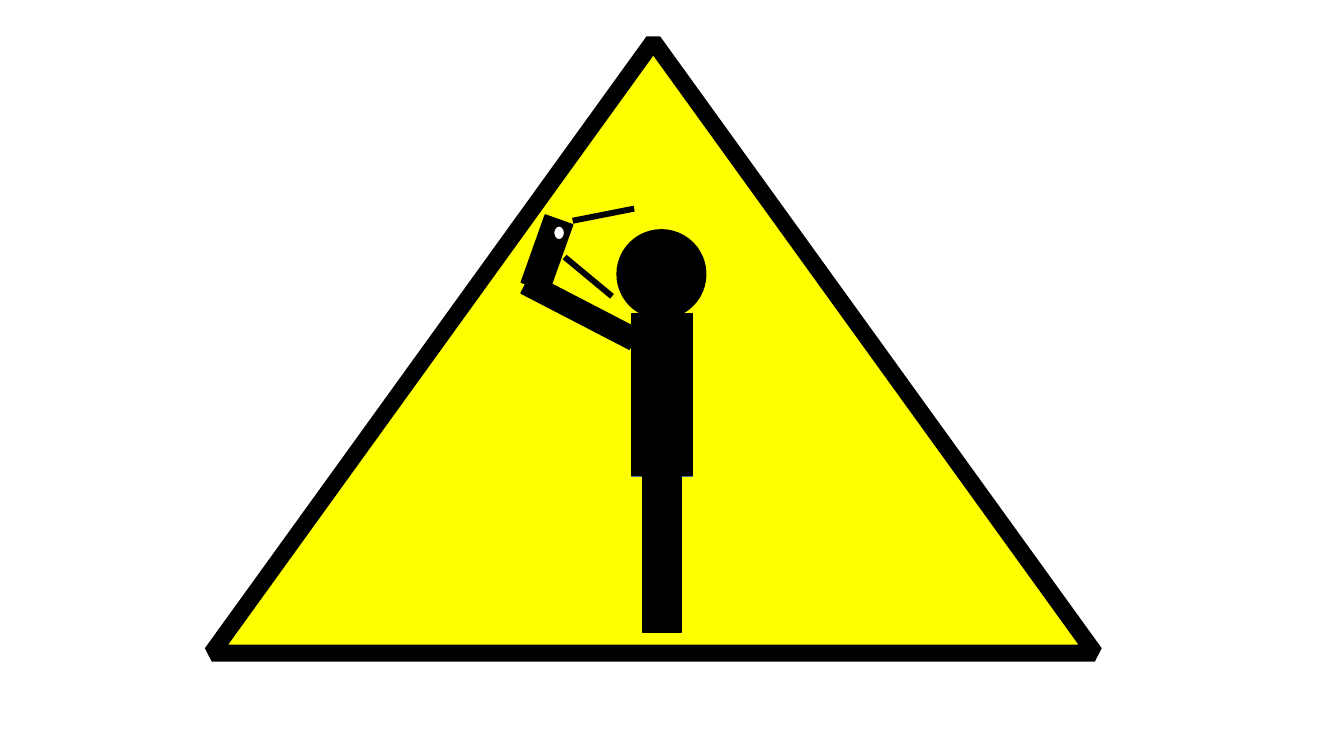
from lxml import etree
from pptx import Presentation
from pptx import util as u
from pptx.dml.color import RGBColor
from pptx.enum import shapes
from pptx.oxml.ns import qn

COLORS = {
    "sign": "FFFF00",
    "ink": "000000",
    "lens": "FFFFFF",
    "edge": "43739E",
}
SHAPE = shapes.MSO_SHAPE


def rgb(name):
    return RGBColor.from_string(COLORS[name])


def add_solid(s, kind, box, fill="ink", line="ink", width=1, rotation=0):
    sp = s.shapes.add_shape(kind, *(u.Inches(v) for v in box))
    sp.shadow.inherit = False
    sp.rotation = rotation
    sp.fill.solid()
    sp.fill.fore_color.rgb = rgb(fill)
    sp.line.color.rgb = rgb(line)
    sp.line.width = u.Pt(width)
    return sp


def add_ray(s, start, end):
    ray = s.shapes.add_connector(
        shapes.MSO_CONNECTOR.STRAIGHT, *(u.Inches(v) for v in start + end))
    ray.line.color.rgb = rgb("ink")
    ray.line.width = u.Pt(4.25)
    etree.SubElement(ray._element.spPr, qn("a:effectLst"))


def add_sign(s):
    sign = add_solid(s, SHAPE.ISOSCELES_TRIANGLE, (2.1, 0.41, 8.76, 6.07),
                     fill="sign", width=12)
    # Cut the corners of the border
    etree.SubElement(sign.line._get_or_add_ln(), qn("a:bevel"))


def add_person(s):
    add_solid(s, SHAPE.RECTANGLE, (6.27, 3.12, 0.6, 1.61), line="edge")  # torso edge
    add_solid(s, SHAPE.RECTANGLE, (5.15, 2.98, 1.21, 0.22), rotation=27.4)  # arm
    add_solid(s, SHAPE.OVAL, (6.12, 2.28, 0.88, 0.88))  # head
    add_solid(s, SHAPE.RECTANGLE, (5.28, 2.16, 0.29, 0.71), rotation=19.6)  # phone
    add_solid(s, SHAPE.RECTANGLE, (6.37, 4.73, 0.39, 1.54))  # legs
    add_solid(s, SHAPE.RECTANGLE, (6.27, 3.11, 0.6, 1.61))  # torso


def add_camera_view(s):
    add_ray(s, (5.68, 2.19), (6.29, 2.07))
    add_ray(s, (5.6, 2.55), (6.07, 2.94))
    add_solid(s, SHAPE.OVAL, (5.49, 2.24, 0.11, 0.14), fill="lens")


def main():
    prs = Presentation()
    prs.slide_width, prs.slide_height = u.Inches(13.33), u.Inches(7.5)
    s = prs.slides.add_slide(prs.slide_layouts[6])
    add_sign(s)
    add_person(s)
    add_camera_view(s)
    prs.save("out.pptx")


if __name__ == "__main__":
    main()
